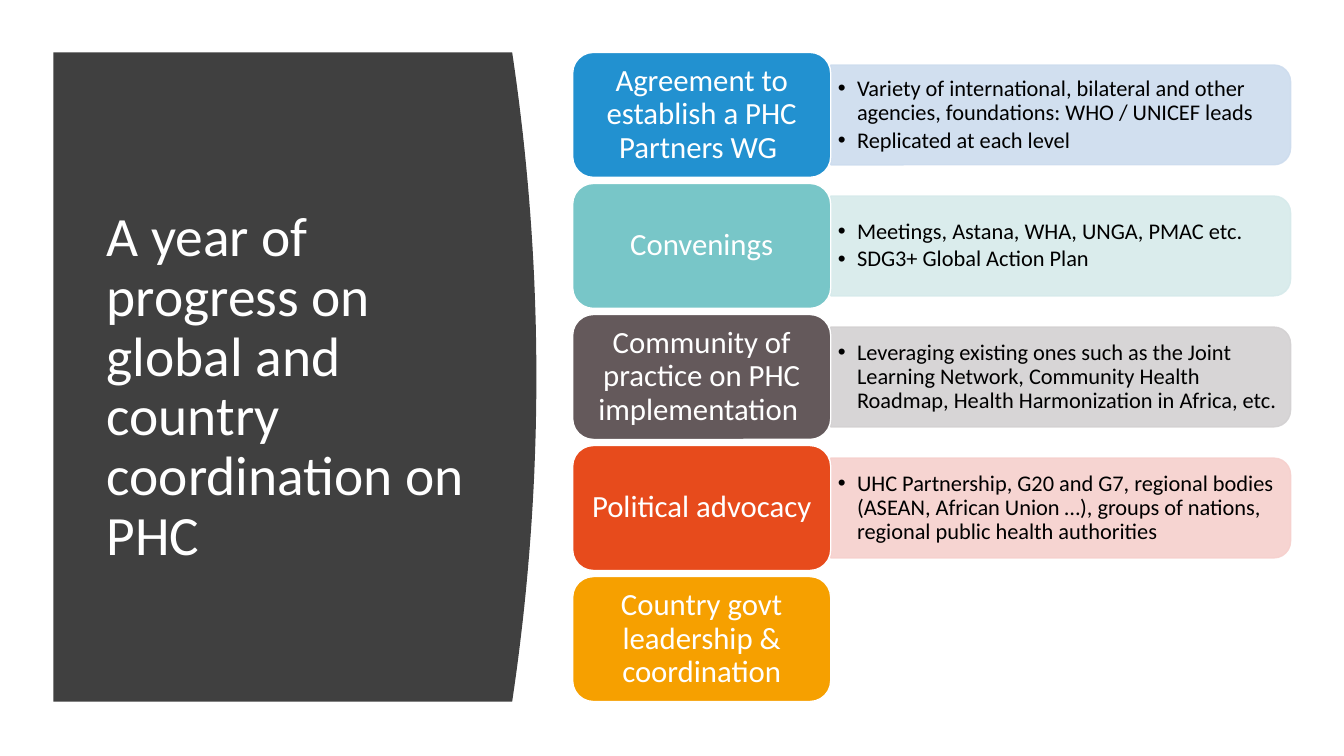
from lxml.etree import SubElement
from pptx import Presentation
from pptx.dml.color import RGBColor
from pptx.enum.shapes import MSO_SHAPE as Preset
from pptx.enum.text import MSO_ANCHOR as Anchor, PP_ALIGN as Align
from pptx.oxml.ns import qn
from pptx.util import Inches, Pt

FONT = "Calibri"
WHITE, BLACK, CHARCOAL = "FFFFFF", "000000", "404040"

TITLE = "A year of progress on global and country coordination on PHC"

# label, label colour, detail colour, details
TOPICS = [
    ("Agreement to establish a PHC Partners WG ", "2291D0", "CDDCEE",
     ["Variety of international, bilateral and other agencies, foundations: WHO / UNICEF leads",
      "Replicated at each level"]),
    ("Convenings", "78C6C8", "D6EAEB",
     ["Meetings, Astana, WHA, UNGA, PMAC etc.", "SDG3+ Global Action Plan"]),
    ("Community of practice on PHC implementation ", "64595B", "D3D1D2",
     ["Leveraging existing ones such as the Joint Learning Network, Community Health "
      "Roadmap, Health Harmonization in Africa, etc."]),
    ("Political advocacy", "E74B1C", "F6D0CD",
     ["UHC Partnership, G20 and G7, regional bodies (ASEAN, African Union …), "
      "groups of nations, regional public health authorities"]),
    ("Country govt leadership & coordination", "F6A000", None, []),
]

SLIDE_WIDTH, SLIDE_HEIGHT = 13.33, 7.5
TOP, BOTTOM = 0.52, 6.96
PANEL_LEFT, PANEL_EDGE, PANEL_BULGE = 0.53, 5.08, 0.24
CURVE_STEPS = 40
LABEL_LEFT, LABEL_WIDTH, LABEL_HEIGHT = 5.68, 2.56, 1.24
ROW_PITCH = (BOTTOM - TOP - LABEL_HEIGHT) / (len(TOPICS) - 1)
DETAIL_LEFT = LABEL_LEFT + LABEL_WIDTH
DETAIL_WIDTH, DETAIL_HEIGHT = 4.56, 0.99
TEXT_WIDTH, TEXT_HEIGHT = 4.51, 0.89
BULLET_INDENT = 0.19


def color(hex_string):
    return RGBColor.from_string(hex_string)


def paint(shape, fill, line=None, opacity=100):
    shape.shadow.inherit = False
    shape.fill.solid()
    shape.fill.fore_color.rgb = color(fill)
    if line:
        shape.line.color.rgb = color(line)
        shape.line.width = Pt(1)
    else:
        shape.line.fill.background()
    if opacity < 100:
        for node in shape.element.spPr.iter(qn("a:srgbClr")):
            SubElement(node, qn("a:alpha"), val=str(opacity * 1000))


def add_bullet(paragraph):
    properties = paragraph._p.get_or_add_pPr()
    properties.set("marL", str(Inches(BULLET_INDENT)))
    properties.set("indent", str(-Inches(BULLET_INDENT)))
    SubElement(properties, qn("a:buFont"), typeface="Arial")
    SubElement(properties, qn("a:buChar"), char="•")


def write(shape, lines, size, ink, margins, align=Align.LEFT, bullets=False):
    """Fill a shape with middle-anchored paragraphs; margins are (sides, top and bottom)."""
    frame = shape.text_frame
    frame.word_wrap = True
    frame.vertical_anchor = Anchor.MIDDLE
    frame.margin_left = frame.margin_right = Inches(margins[0])
    frame.margin_top = frame.margin_bottom = Inches(margins[1])
    for index, line in enumerate(lines):
        paragraph = frame.add_paragraph() if index else frame.paragraphs[0]
        paragraph.text = line
        paragraph.alignment = align
        paragraph.line_spacing = 0.9
        if bullets:
            paragraph.space_after = Pt(size * 0.15)
            add_bullet(paragraph)
        paragraph.font.name = FONT
        paragraph.font.size = Pt(size)
        paragraph.font.color.rgb = color(ink)


def add_text_box(slide, left, top, width, height):
    return slide.shapes.add_textbox(*map(Inches, (left, top, width, height)))


def add_title_panel(slide):
    """Draw the dark panel, whose right edge is a parabola, and the title on it."""
    curve = []
    for step in range(CURVE_STEPS + 1):
        share = step / CURVE_STEPS
        bulge = PANEL_BULGE * (1 - (2 * share - 1) ** 2)
        curve.append((Inches(PANEL_EDGE + bulge), Inches(TOP + share * (BOTTOM - TOP))))
    builder = slide.shapes.build_freeform(Inches(PANEL_LEFT), Inches(TOP))
    builder.add_line_segments(curve + [(Inches(PANEL_LEFT), Inches(BOTTOM))], close=True)
    paint(builder.convert_to_shape(), CHARCOAL)
    title = add_text_box(slide, 0.96, 1.55, 3.74, 4.6)
    write(title, [TITLE], 39.6, WHITE, (0.1, 0.05))


def add_details(slide, middle, tint, details):
    # The preset rounds its top corners, so it is laid on its side.
    center = DETAIL_LEFT + DETAIL_WIDTH / 2
    pane = slide.shapes.add_shape(
        Preset.ROUND_2_SAME_RECTANGLE,
        Inches(center - DETAIL_HEIGHT / 2), Inches(middle - DETAIL_WIDTH / 2),
        Inches(DETAIL_HEIGHT), Inches(DETAIL_WIDTH))
    pane.rotation = 90
    paint(pane, tint, tint, opacity=90)
    box = add_text_box(slide, DETAIL_LEFT, middle - TEXT_HEIGHT / 2, TEXT_WIDTH, TEXT_HEIGHT)
    write(box, details, 16, BLACK, (0.07, 0.03), bullets=True)


def add_topic(slide, row, topic):
    label, fill, tint, details = topic
    top = TOP + row * ROW_PITCH
    if details:
        add_details(slide, top + LABEL_HEIGHT / 2, tint, details)
    block = slide.shapes.add_shape(
        Preset.ROUNDED_RECTANGLE, Inches(LABEL_LEFT), Inches(top),
        Inches(LABEL_WIDTH), Inches(LABEL_HEIGHT))
    paint(block, fill, WHITE)
    write(block, [label], 22, WHITE, (0.09, 0.05), Align.CENTER)


def main():
    presentation = Presentation()
    presentation.slide_width = Inches(SLIDE_WIDTH)
    presentation.slide_height = Inches(SLIDE_HEIGHT)
    slide = presentation.slides.add_slide(presentation.slide_layouts[6])
    add_title_panel(slide)
    for row, topic in enumerate(TOPICS):
        add_topic(slide, row, topic)
    presentation.save("out.pptx")


if __name__ == "__main__":
    main()
